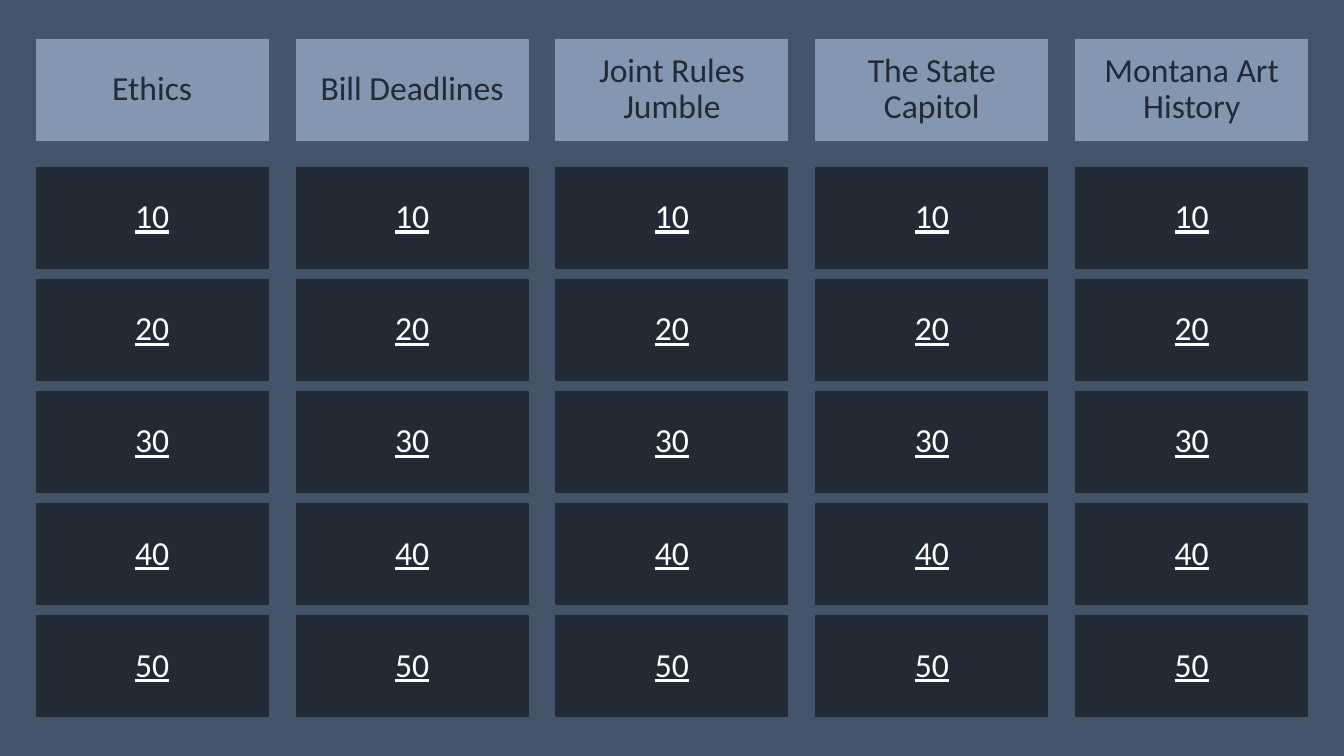
from pptx import Presentation
from pptx.dml.color import RGBColor
from pptx.enum.shapes import MSO_SHAPE as SHAPE
from pptx.enum.text import MSO_ANCHOR as ANCHOR, PP_ALIGN as ALIGN
from pptx.util import Inches, Pt

# Content
CATEGORIES = ["Ethics", "Bill Deadlines", "Joint Rules Jumble",
              "The State Capitol", "Montana Art History"]
POINTS = ["10", "20", "30", "40", "50"]

# Colours
SLATE, HEADER, DARK, WHITE = "44546A", "8497B0", "222A35", "FFFFFF"

# Grid, in inches
TILE_W, TILE_H = 2.3, 1
FIRST_LEFT, LAST_LEFT = 0.36, 10.67
HEADER_TOP, FIRST_TOP, LAST_TOP = 0.39, 1.66, 6.11
COL_STEP = (LAST_LEFT - FIRST_LEFT) / (len(CATEGORIES) - 1)
ROW_STEP = (LAST_TOP - FIRST_TOP) / (len(POINTS) - 1)


def rgb(hex_code):
    return RGBColor.from_string(hex_code)


def add_text(tf, text, color=WHITE, size=24, font="Calibri", underline=None):
    tf.word_wrap = True
    tf.vertical_anchor = ANCHOR.MIDDLE
    p = tf.paragraphs[0]
    p.alignment = ALIGN.CENTER
    p.line_spacing = 0.9
    r = p.add_run()
    r.text = text
    r.font.name = font
    r.font.size = Pt(size)
    r.font.underline = underline
    r.font.color.rgb = rgb(color)


def add_tile(s, left, top, text, fill, **text_format):
    sp = s.shapes.add_shape(SHAPE.RECTANGLE, Inches(left), Inches(top),
                            Inches(TILE_W), Inches(TILE_H))
    sp.shadow.inherit = False
    sp.fill.solid()
    sp.fill.fore_color.rgb = rgb(fill)
    sp.line.color.rgb = rgb(fill)
    sp.line.width = Pt(0.75)
    add_text(sp.text_frame, text, **text_format)


prs = Presentation()
prs.slide_width, prs.slide_height = Inches(13.33), Inches(7.5)
s = prs.slides.add_slide(prs.slide_layouts[6])
s.background.fill.solid()
s.background.fill.fore_color.rgb = rgb(SLATE)

# One column per category: header above its point tiles
for col, category in enumerate(CATEGORIES):
    left = FIRST_LEFT + col * COL_STEP
    add_tile(s, left, HEADER_TOP, category, HEADER, color=DARK)
    for row, points in enumerate(POINTS):
        add_tile(s, left, FIRST_TOP + row * ROW_STEP, points, DARK, underline=True)

prs.save("out.pptx")
